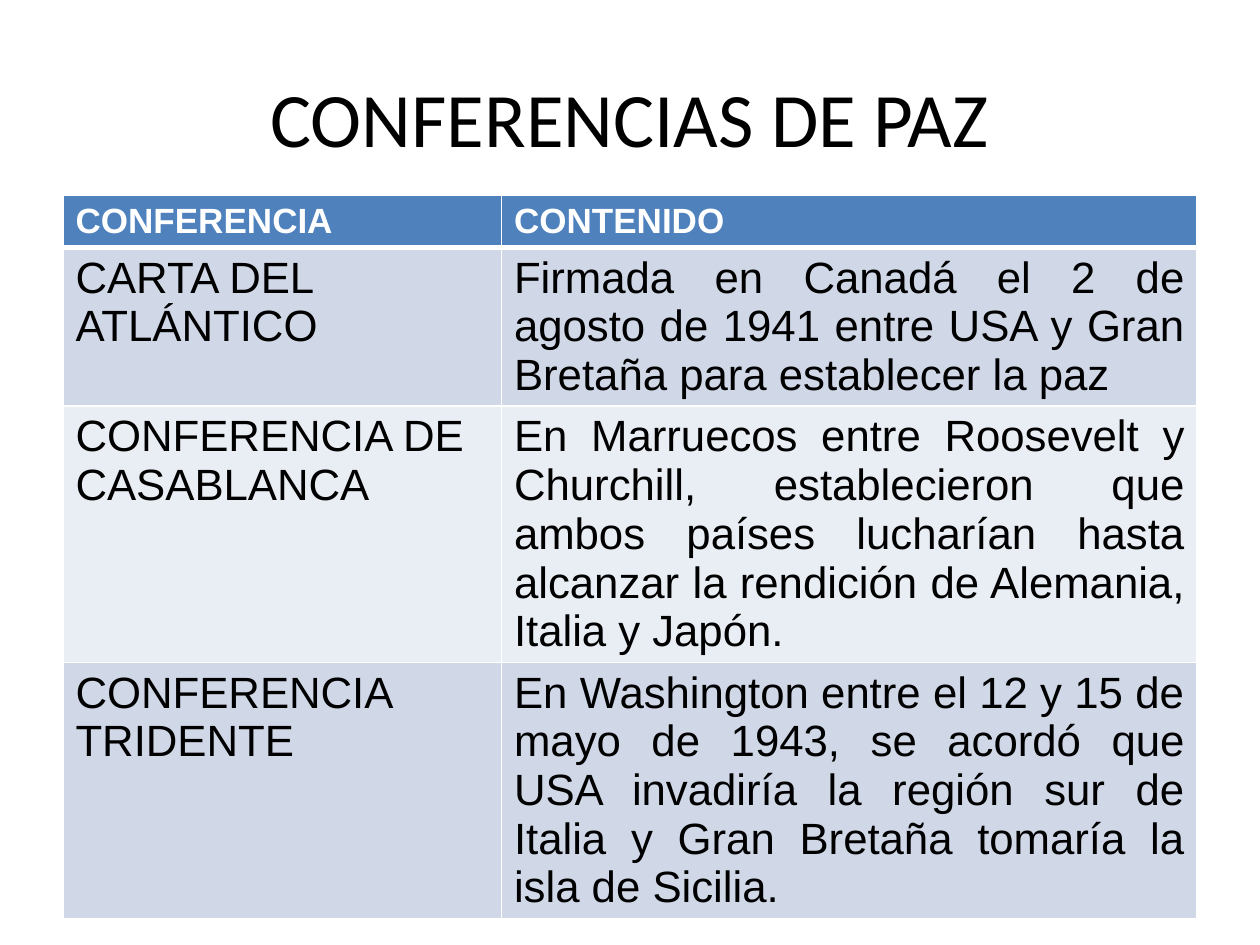
"""Build a slide with a table of wartime peace conferences."""
from lxml import etree
from pptx import Presentation
from pptx import util as u
from pptx.dml.color import RGBColor
from pptx.enum import text
from pptx.oxml.ns import qn

ROWS = [
    ("CONFERENCIA", "CONTENIDO"),
    ("CARTA DEL ATLÁNTICO",
     "Firmada en Canadá el 2 de agosto de 1941 entre USA y Gran Bretaña "
     "para establecer la paz"),
    ("CONFERENCIA DE CASABLANCA",
     "En Marruecos entre Roosevelt y Churchill, establecieron que ambos "
     "países lucharían hasta alcanzar la rendición de Alemania, Italia y Japón."),
    ("CONFERENCIA TRIDENTE",
     "En Washington entre el 12 y 15 de mayo de 1943, se acordó que USA "
     "invadiría la región sur de Italia y Gran Bretaña tomaría la isla de Sicilia."),
]


def rgb(value):
    return RGBColor.from_string(value)


def write(tf, content, font="Arial", size=25, color="000000", bold=False,
          align=text.PP_ALIGN.LEFT):
    p = tf.paragraphs[0]
    p.alignment = align
    r = p.add_run()
    r.text = content
    r.font.name, r.font.size, r.font.bold = font, u.Pt(size), bold
    r.font.color.rgb = rgb(color)


def border(cell, side, color="FFFFFF", width=1):
    ln = etree.Element(qn(f"a:ln{side}"), w=str(u.Pt(width)))
    fill = etree.SubElement(ln, qn("a:solidFill"))
    etree.SubElement(fill, qn("a:srgbClr"), val=color)
    return ln


class Deck:
    header, bands = "4F81BD", ("E9EDF4", "D0D8E8")

    def __init__(self, width=10, height=7.5):
        self.prs = Presentation()
        self.prs.slide_width, self.prs.slide_height = u.Inches(width), u.Inches(height)
        self.s = self.prs.slides.add_slide(self.prs.slide_layouts[5])

    def box(self, x, y, w, h):
        sw, sh = self.prs.slide_width, self.prs.slide_height
        return [round(v) for v in (x * sw, y * sh, w * sw, h * sh)]

    def title(self, content, *share):
        sp = self.s.shapes.title
        sp.left, sp.top, sp.width, sp.height = self.box(*share)
        sp.text_frame.vertical_anchor = text.MSO_ANCHOR.MIDDLE
        write(sp.text_frame, content, font="Calibri", size=44,
              align=text.PP_ALIGN.CENTER)

    def table(self, rows, widths, *share):
        tbl = self.s.shapes.add_table(len(rows), len(widths), *self.box(*share)).table
        for col, width in zip(tbl.columns, widths):
            col.width = u.Inches(width)
        for i, row in enumerate(rows):
            for j, content in enumerate(row):
                self.cell(tbl.cell(i, j), content, i == 0, self.bands[i % 2], j == 1)

    def cell(self, cell, content, is_header, band, justified):
        if is_header:
            write(cell.text_frame, content, size=20, color="FFFFFF", bold=True)
        else:
            write(cell.text_frame, content, align=text.PP_ALIGN.JUSTIFY if justified
                  else text.PP_ALIGN.LEFT)
        cell.fill.solid()
        cell.fill.fore_color.rgb = rgb(self.header if is_header else band)
        tc_pr = cell._tc.get_or_add_tcPr()
        for k, side in enumerate("LRTB"):
            width = 3 if is_header and side == "B" else 1
            tc_pr.insert(k, border(cell, side, width=width))


def main():
    deck = Deck()
    deck.title("CONFERENCIAS DE PAZ", 0.05, 0.04, 0.9, 1 / 6)
    deck.table(ROWS, (3.48, 5.52), 0.05, 0.2067, 0.9, 0.22)
    deck.prs.save("out.pptx")


if __name__ == "__main__":
    main()
